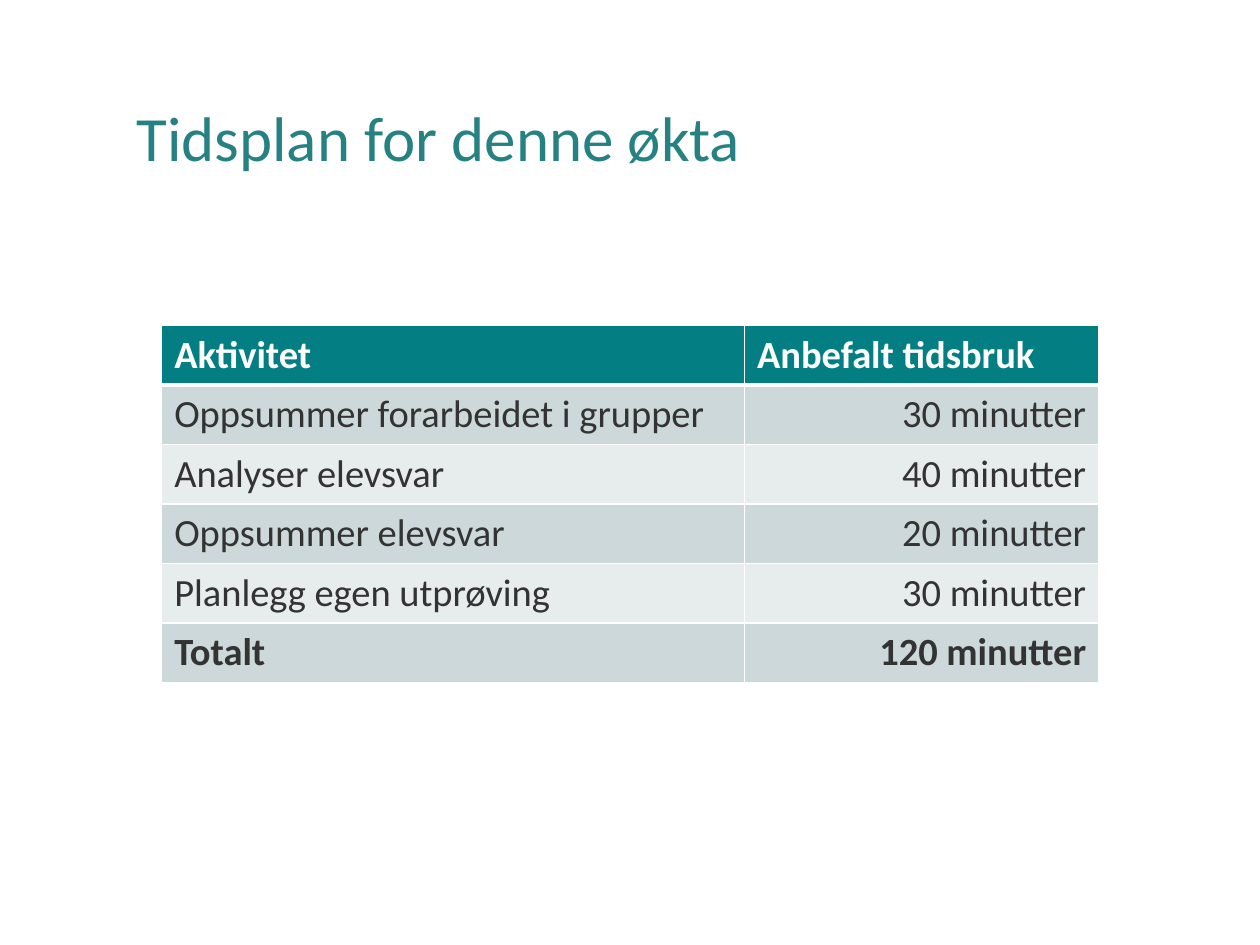
from typing import NamedTuple

from lxml.etree import SubElement
from pptx import Presentation
from pptx.dml.color import RGBColor
from pptx.enum.text import MSO_ANCHOR, PP_ALIGN
from pptx.oxml.ns import qn
from pptx.util import Cm, Pt

FONT = "Calibri"
TITLE_TEAL = RGBColor(0x26, 0x81, 0x83)
HEADER_TEAL = RGBColor(0x03, 0x7F, 0x83)
BAND_DARK = RGBColor(0xCC, 0xD8, 0xD9)
BAND_LIGHT = RGBColor(0xE7, 0xEC, 0xED)
INK = RGBColor(0x33, 0x33, 0x33)
WHITE = RGBColor(0xFF, 0xFF, 0xFF)

COLUMN_WIDTHS = (Cm(11.75), Cm(7.14))
ROW_HEIGHT = Cm(1.2)


class Activity(NamedTuple):
    name: str
    duration: str


HEADER = Activity("Aktivitet", "Anbefalt tidsbruk")
ACTIVITIES = (
    Activity("Oppsummer forarbeidet i grupper", "30 minutter"),
    Activity("Analyser elevsvar", "40 minutter"),
    Activity("Oppsummer elevsvar", "20 minutter"),
    Activity("Planlegg egen utprøving", "30 minutter"),
    Activity("Totalt", "120 minutter"),
)


def set_borders(cell, bottom: int) -> None:
    """White 1 pt lines, with a bottom line of the given width in points."""
    properties = cell._tc.get_or_add_tcPr()
    for side, points in {"L": 1, "R": 1, "T": 1, "B": bottom}.items():
        line = SubElement(properties, qn(f"a:ln{side}"), w=str(Pt(points)))
        fill = SubElement(line, qn("a:solidFill"))
        SubElement(fill, qn("a:srgbClr"), val=str(WHITE))


def style_font(font, size: int, color: RGBColor, bold: bool = False) -> None:
    font.name = FONT
    font.size = Pt(size)
    font.bold = bold
    font.color.rgb = color


def add_title(slide, text: str) -> None:
    title = slide.shapes.title
    title.left, title.top, title.width, title.height = Cm(2.5), Cm(1.01), Cm(21.05), Cm(3.68)
    title.text_frame.text = text
    title.text_frame.vertical_anchor = MSO_ANCHOR.MIDDLE
    paragraph = title.text_frame.paragraphs[0]
    paragraph.alignment = PP_ALIGN.LEFT
    paragraph.line_spacing = 0.9
    style_font(paragraph.runs[0].font, 36, TITLE_TEAL)


def add_schedule(slide) -> None:
    rows = (HEADER, *ACTIVITIES)
    table = slide.shapes.add_table(
        len(rows), len(COLUMN_WIDTHS), Cm(3.26), Cm(6.56),
        sum(COLUMN_WIDTHS), ROW_HEIGHT * len(rows),
    ).table
    for column, width in zip(table.columns, COLUMN_WIDTHS):
        column.width = width

    for row_index, activity in enumerate(rows):
        is_header = activity is HEADER
        is_total = activity is ACTIVITIES[-1]
        band = BAND_DARK if row_index % 2 else BAND_LIGHT
        for column_index, text in enumerate(activity):
            cell = table.cell(row_index, column_index)
            set_borders(cell, bottom=3 if is_header else 1)
            cell.fill.solid()
            cell.fill.fore_color.rgb = HEADER_TEAL if is_header else band
            cell.text_frame.text = text
            paragraph = cell.text_frame.paragraphs[0]
            if column_index == 1 and not is_header:
                paragraph.alignment = PP_ALIGN.RIGHT
            style_font(paragraph.runs[0].font, 22, WHITE if is_header else INK,
                       bold=is_header or is_total)


def main() -> None:
    presentation = Presentation()
    presentation.slide_width, presentation.slide_height = Cm(25.4), Cm(19.05)
    slide = presentation.slides.add_slide(presentation.slide_layouts[5])
    add_title(slide, "Tidsplan for denne økta")
    add_schedule(slide)
    presentation.save("out.pptx")


if __name__ == "__main__":
    main()
